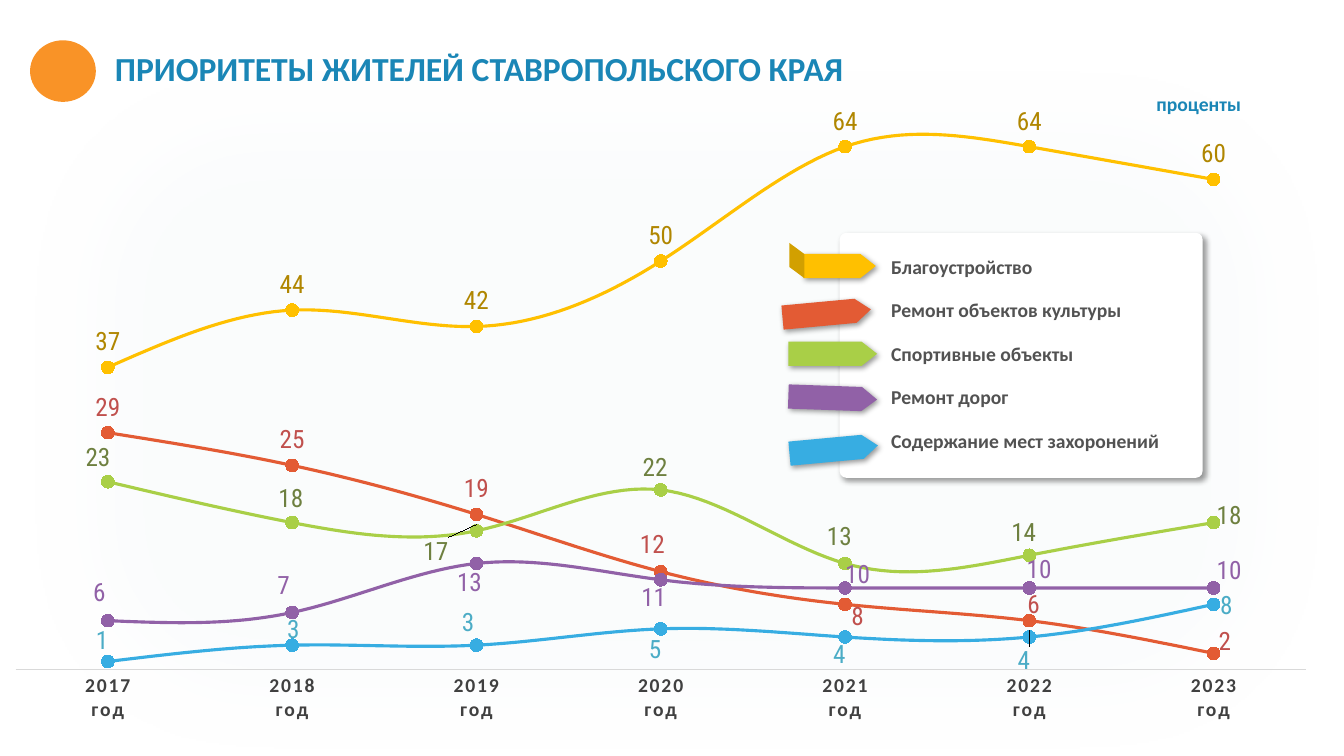
from dataclasses import dataclass
from lxml.etree import SubElement
from pptx import Presentation
from pptx.chart.data import CategoryChartData
from pptx.dml.color import RGBColor
from pptx.enum.chart import XL_CHART_TYPE, XL_LABEL_POSITION, XL_MARKER_STYLE, XL_TICK_MARK
from pptx.enum.shapes import MSO_SHAPE
from pptx.enum.text import MSO_ANCHOR, MSO_AUTO_SIZE, PP_ALIGN
from pptx.oxml.ns import qn
from pptx.util import Pt


@dataclass(frozen=True)
class Theme:
    blue: str = "1A86B6"
    dark: str = "404040"
    grey: str = "525252"
    rule: str = "D9D9D9"
    haze: str = "FAFBFC"
    white: str = "FFFFFF"
    black: str = "000000"
    logo: str = "F99327"
    fold: str = "D2A000"
    face: str = "Calibri"
    slim: str = "Roboto Condensed"
    head: int = 24
    text: int = 14
    value: int = 18


T = Theme()
YEARS = [f"{year}\nгод" for year in range(2017, 2024)]
TOPICS = ["Благоустройство", "Ремонт объектов культуры", "Спортивные объекты",
          "Ремонт дорог", "Содержание мест захоронений"]
TINTS = ["FFC000", "E35B34", "A9CF47", "9161A7", "37ADE2"]
INKS = ["B08600", "C0504D", "6E8040", "9161A7", "4BACC6"]
RATES = [
    [37, 44, 42, 50, 64, 64, 60],
    [29, 25, 19, 12, 8, 6, 2],
    [23, 18, 17, 22, 13, 14, 18],
    [6, 7, 13, 11, 10, 10, 10],
    [1, 3, 3, 5, 4, 4, 8],
]
SHIFTS = [
    {},
    {3: (-6, -1), 4: (9, 27), 5: (3, 7), 6: (8, 10)},
    {0: (-7, 1), 1: (-1, 1), 2: (-29, 33), 3: (-4, 2), 4: (-4, -1), 5: (-4, 2), 6: (11, 13)},
    {0: (-6, -2), 1: (-6, -1), 2: (-5, 32), 3: (-5, 31), 4: (9, 9), 5: (7, 5), 6: (11, 6)},
    {0: (-4, 3), 1: (1, 7), 2: (-6, 2), 3: (-4, 33), 4: (-4, 31), 5: (-4, 35), 6: (9, 19)},
]


def put(item, **values):
    for key, value in values.items():
        setattr(item, key, value)


def style(font, size, tint, face=T.face, bold=False):
    put(font, size=Pt(size), name=face, bold=bold)
    font.color.rgb = RGBColor.from_string(tint)


def place(item, box):
    put(item, **dict(zip(("left", "top", "width", "height"), map(Pt, box))))


def shape(slide, kind, box, tint, turn=0, adjust=()):
    item = slide.shapes.add_shape(kind, *map(Pt, box))
    item.rotation = turn
    for index, value in enumerate(adjust):
        item.adjustments[index] = value
    item.fill.solid()
    item.fill.fore_color.rgb = RGBColor.from_string(tint)
    item.line.fill.background()
    item.shadow.inherit = False
    return item


def shade(item, gap):
    effects = item._element.spPr.find(qn("a:effectLst"))
    outer = SubElement(effects, qn("a:outerShdw"), blurRad=str(Pt(4)), dist=str(Pt(gap)),
                       dir="2700000", algn="tl", rotWithShape="0")
    color = SubElement(outer, qn("a:srgbClr"), val=T.black)
    SubElement(color, qn("a:alpha"), val="40000")


def backdrop(slide, box):
    item = shape(slide, MSO_SHAPE.ROUNDED_RECTANGLE, box, T.haze, adjust=(0.233,))
    props = item._element.spPr
    SubElement(props.find(".//" + qn("a:srgbClr")), qn("a:alpha"), val="72000")
    SubElement(props.find(qn("a:effectLst")), qn("a:softEdge"), rad=str(Pt(50)))


def layout(parent, index, **values):
    for old in parent.findall(qn("c:layout")):
        parent.remove(old)
    frame = SubElement(parent, qn("c:layout"))
    parent.insert(index, frame)
    manual = SubElement(frame, qn("c:manualLayout"))
    for key, value in values.items():
        SubElement(manual, qn("c:" + key), val=str(value))


def label(point, ink, shift, box):
    tag = point.data_label
    style(tag.font, T.value, ink, T.slim)
    tag.position = XL_LABEL_POSITION.ABOVE
    if shift:
        layout(tag._dLbl, 1, x=round(shift[0] / box[2], 4), y=round(shift[1] / box[3], 4))


def graph(slide, box):
    data = CategoryChartData()
    data.categories = YEARS
    for topic, rates in zip(TOPICS, RATES):
        data.add_series(topic, rates)
    chart = slide.shapes.add_chart(XL_CHART_TYPE.LINE_MARKERS, *map(Pt, box), data).chart
    put(chart, has_legend=False, has_title=False)
    style(chart.font, 10, T.black)
    put(chart.value_axis, minimum_scale=0, maximum_scale=70,
        has_major_gridlines=False, visible=False)
    axis = chart.category_axis
    put(axis, major_tick_mark=XL_TICK_MARK.NONE, minor_tick_mark=XL_TICK_MARK.NONE,
        has_major_gridlines=False)
    axis.format.line.width = Pt(0.75)
    axis.format.line.color.rgb = RGBColor.from_string(T.rule)
    style(axis.tick_labels.font, T.text, T.dark, bold=True)
    axis.tick_labels.font._element.set("spc", "120")
    area = chart._chartSpace.chart.plotArea
    layout(area, 0, layoutTarget="inner", xMode="edge", yMode="edge",
           x=0.02, y=0.02, w=0.96, h=0.88)
    chart.plots[0].vary_by_categories = False
    for line, tint, ink, shifts in zip(chart.plots[0].series, TINTS, INKS, SHIFTS):
        color = RGBColor.from_string(tint)
        line.smooth = True
        line.format.line.width = Pt(2.25)
        line.format.line.color.rgb = color
        put(line.marker, style=XL_MARKER_STYLE.CIRCLE, size=9)
        line.marker.format.fill.solid()
        line.marker.format.fill.fore_color.rgb = color
        line.marker.format.line.fill.background()
        for index in range(len(YEARS)):
            label(line.points[index], ink, shifts.get(index), box)


def header(slide, box):
    left, top, width, height = box
    shape(slide, MSO_SHAPE.OVAL, (left, top, 47, 44), T.logo)
    title = slide.shapes.title
    slide.shapes._spTree.append(title._element)
    place(title, (left + 53.4, top + 1.4, 569, 36.7))
    put(title.text_frame, text="ПРИОРИТЕТЫ ЖИТЕЛЕЙ СТАВРОПОЛЬСКОГО КРАЯ", word_wrap=True,
        auto_size=MSO_AUTO_SIZE.NONE, vertical_anchor=MSO_ANCHOR.MIDDLE)
    line = title.text_frame.paragraphs[0]
    line.alignment = PP_ALIGN.LEFT
    style(line.font, T.head, T.blue, bold=True)
    unit = slide.shapes.add_textbox(*map(Pt, (left + width - 171, top + 11.5, 171, height - 11.5)))
    put(unit.text_frame, text="проценты", word_wrap=True, margin_right=Pt(10),
        vertical_anchor=MSO_ANCHOR.MIDDLE)
    line = unit.text_frame.paragraphs[0]
    put(line, alignment=PP_ALIGN.RIGHT, line_spacing=Pt(25.6))
    style(line.font, T.text, T.blue, bold=True)


def legend(slide, box):
    left, top, width, height = box
    panel = shape(slide, MSO_SHAPE.ROUNDED_RECTANGLE, box, T.white, adjust=(0.027,))
    shade(panel, 3)
    body = slide.placeholders[1]
    slide.shapes._spTree.append(body._element)
    place(body, (left + 29.5, top + 12.2, width - 36, height - 20))
    put(body.text_frame, text="\n".join(TOPICS), word_wrap=True,
        auto_size=MSO_AUTO_SIZE.NONE, vertical_anchor=MSO_ANCHOR.TOP)
    for index, line in enumerate(body.text_frame.paragraphs):
        props = line._p.get_or_add_pPr()
        props.set("marL", "0")
        props.set("indent", "0")
        SubElement(props, qn("a:buNone"))
        put(line, space_before=Pt(14.2 if index else 0), alignment=PP_ALIGN.LEFT)
        style(line.font, T.text, T.grey, bold=True)
    spots = [(-26, 15.1, 51.8, 0), (-41, 49, 63.4, 354.7), (-36.7, 77.8, 63.4, 0),
             (-36.7, 109.4, 63.4, 2), (-36, 146.2, 63.4, 354.7)]
    for (x, y, wide, turn), tint in zip(spots, TINTS):
        arrow = shape(slide, MSO_SHAPE.RIGHT_ARROW, (left + x, top + y, wide, 17.3),
                      tint, turn, (1, 0.639))
        shade(arrow, 2)
    shape(slide, MSO_SHAPE.PARALLELOGRAM, (left - 43.2, top + 14.4, 25.2, 10.8),
          T.fold, 90, (0.741,))


def main():
    deck = Presentation()
    put(deck, slide_width=Pt(960), slide_height=Pt(540))
    slide = deck.slides.add_slide(deck.slide_layouts[1])
    backdrop(slide, (21, 46.8, 926, 493.2))
    graph(slide, (-8, 60.5, 960, 464.4))
    header(slide, (21.5, 28.8, 875, 69.9))
    legend(slide, (599.8, 166.3, 259.2, 175))
    deck.save("out.pptx")


if __name__ == "__main__":
    main()
